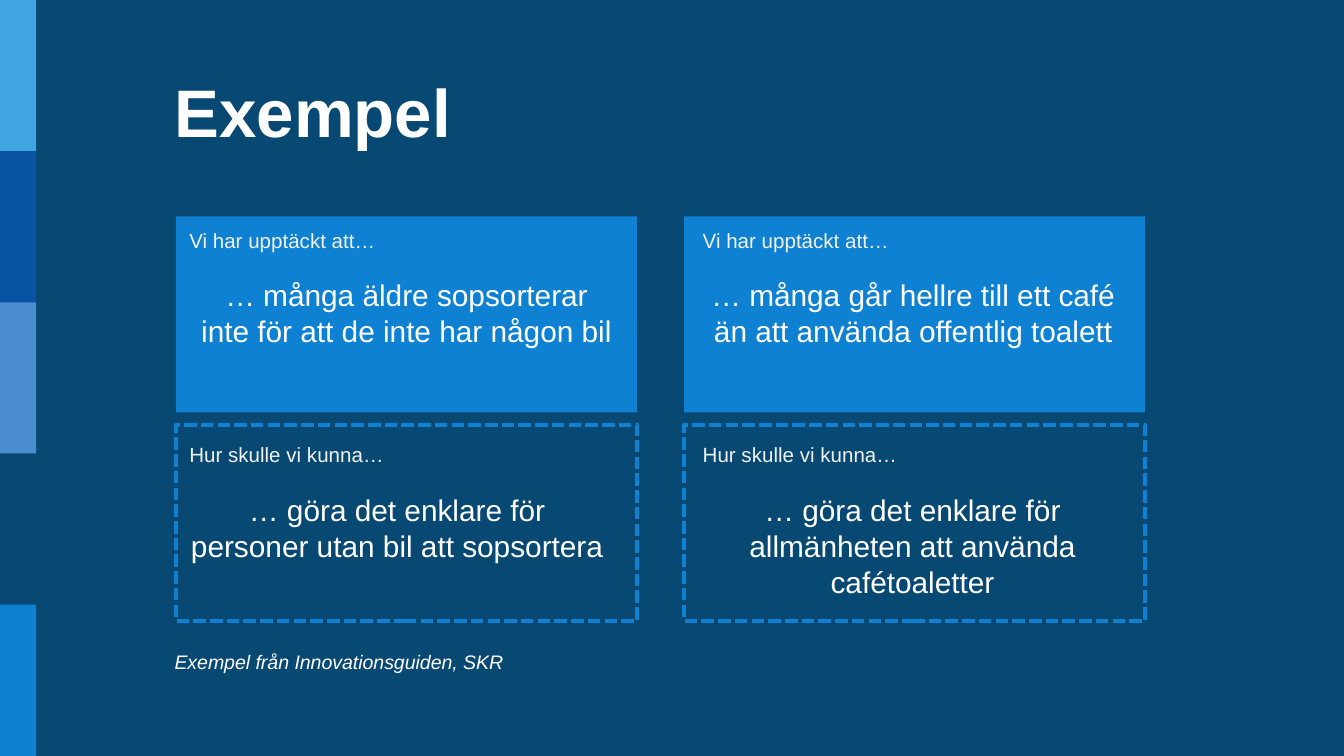
"""Build the example slide pairing insights with design questions."""
import dataclasses

import pptx
import pptx.dml.color
import pptx.enum.dml
import pptx.enum.shapes
import pptx.enum.text
import pptx.util

Inches = pptx.util.Inches
Align = pptx.enum.text.PP_ALIGN
Anchor = pptx.enum.text.MSO_ANCHOR
SLIDE_WIDTH = 10
SLIDE_HEIGHT = SLIDE_WIDTH * 9 / 16


@dataclasses.dataclass(frozen=True)
class Theme:
    font: str = "Arial"
    background: str = "084973"
    accent: str = "0F81D3"
    text: str = "FFFFFF"
    lead: str = "F2F2F2"
    stripes: tuple = ("40A4E1", "0953A5", "4B8ECF", "084973", "0F81D3")
    title_size: float = 36
    body_size: float = 16
    lead_size: float = 11
    source_size: float = 10.5
    outline: float = 2.25


def rgb(value):
    return pptx.dml.color.RGBColor.from_string(value)


def write(frame, text, *, font, size, color, bold=False, italic=False,
          align=Align.LEFT, anchor=Anchor.TOP):
    frame.word_wrap = True
    frame.auto_size = pptx.enum.text.MSO_AUTO_SIZE.NONE
    frame.vertical_anchor = anchor
    paragraph = frame.paragraphs[0]
    paragraph.alignment = align
    run = paragraph.add_run()
    run.text = text
    run.font.name = font
    run.font.size = pptx.util.Pt(size)
    run.font.color.rgb = rgb(color)
    run.font.bold = bold
    run.font.italic = italic


class SlideBuilder:
    def __init__(self, slide, theme):
        self.slide = slide
        self.theme = theme
        slide.background.fill.solid()
        slide.background.fill.fore_color.rgb = rgb(theme.background)

    def title(self, text, left, top, width, height):
        heading = self.slide.shapes.title
        heading.left, heading.top = Inches(left), Inches(top)
        heading.width, heading.height = Inches(width), Inches(height)
        write(heading.text_frame, text, font=self.theme.font,
              size=self.theme.title_size, color=self.theme.text, bold=True,
              anchor=Anchor.BOTTOM)

    def text(self, text, left, top, width, height, **style):
        box = self.slide.shapes.add_textbox(
            Inches(left), Inches(top), Inches(width), Inches(height))
        write(box.text_frame, text, font=self.theme.font, **style)

    def panel(self, left, top, width, height, fill=None):
        panel = self.slide.shapes.add_shape(
            pptx.enum.shapes.MSO_SHAPE.RECTANGLE,
            Inches(left), Inches(top), Inches(width), Inches(height))
        panel.shadow.inherit = False
        if fill:
            panel.fill.solid()
            panel.fill.fore_color.rgb = rgb(fill)
            panel.line.fill.background()
        else:
            panel.fill.background()
            panel.line.color.rgb = rgb(self.theme.accent)
            panel.line.width = pptx.util.Pt(self.theme.outline)
            panel.line.dash_style = pptx.enum.dml.MSO_LINE.SQUARE_DOT

    def card(self, lead, statement, left, top, lead_box, statement_box, fill=None):
        self.panel(left, top, 3.43, 1.46, fill)
        self.text(lead, *lead_box, 4.58, 0.29,
                  size=self.theme.lead_size, color=self.theme.lead)
        self.text(statement, *statement_box, size=self.theme.body_size,
                  color=self.theme.text, align=Align.CENTER)


def main():
    theme = Theme()
    deck = pptx.Presentation()
    deck.slide_width, deck.slide_height = Inches(SLIDE_WIDTH), Inches(SLIDE_HEIGHT)
    builder = SlideBuilder(deck.slides.add_slide(deck.slide_layouts[5]), theme)

    stripe_height = SLIDE_HEIGHT / len(theme.stripes)
    for index, color in enumerate(theme.stripes):
        builder.panel(0, index * stripe_height, 0.27, stripe_height, color)

    builder.title("Exempel", 1.2, 0.23, 7.89, 0.94)
    builder.text("Exempel från Innovationsguiden, SKR", 1.2, 4.79, 4.58, 0.29,
                 size=theme.source_size, color=theme.text, italic=True)

    examples = (
        (1.31, 1.31,
         "… många äldre sopsorterar inte för att de inte har någon bil",
         (1.38, 2.01, 3.29, 0.64),
         "… göra det enklare för personer utan bil att sopsortera",
         (1.31, 3.61, 3.29, 0.64)),
        (5.09, 5.13,
         "… många går hellre till ett café än att använda offentlig toalett",
         (5.15, 2.01, 3.29, 0.64),
         "… göra det enklare för allmänheten att använda cafétoaletter",
         (5.07, 3.61, 3.44, 0.91)),
    )
    for left, lead_left, insight, insight_box, question, question_box in examples:
        builder.card("Vi har upptäckt att…", insight, left, 1.61,
                     (lead_left, 1.65), insight_box, theme.accent)
        builder.card("Hur skulle vi kunna…", question, left, 3.16,
                     (lead_left, 3.24), question_box)

    deck.save("out.pptx")


if __name__ == "__main__":
    main()
